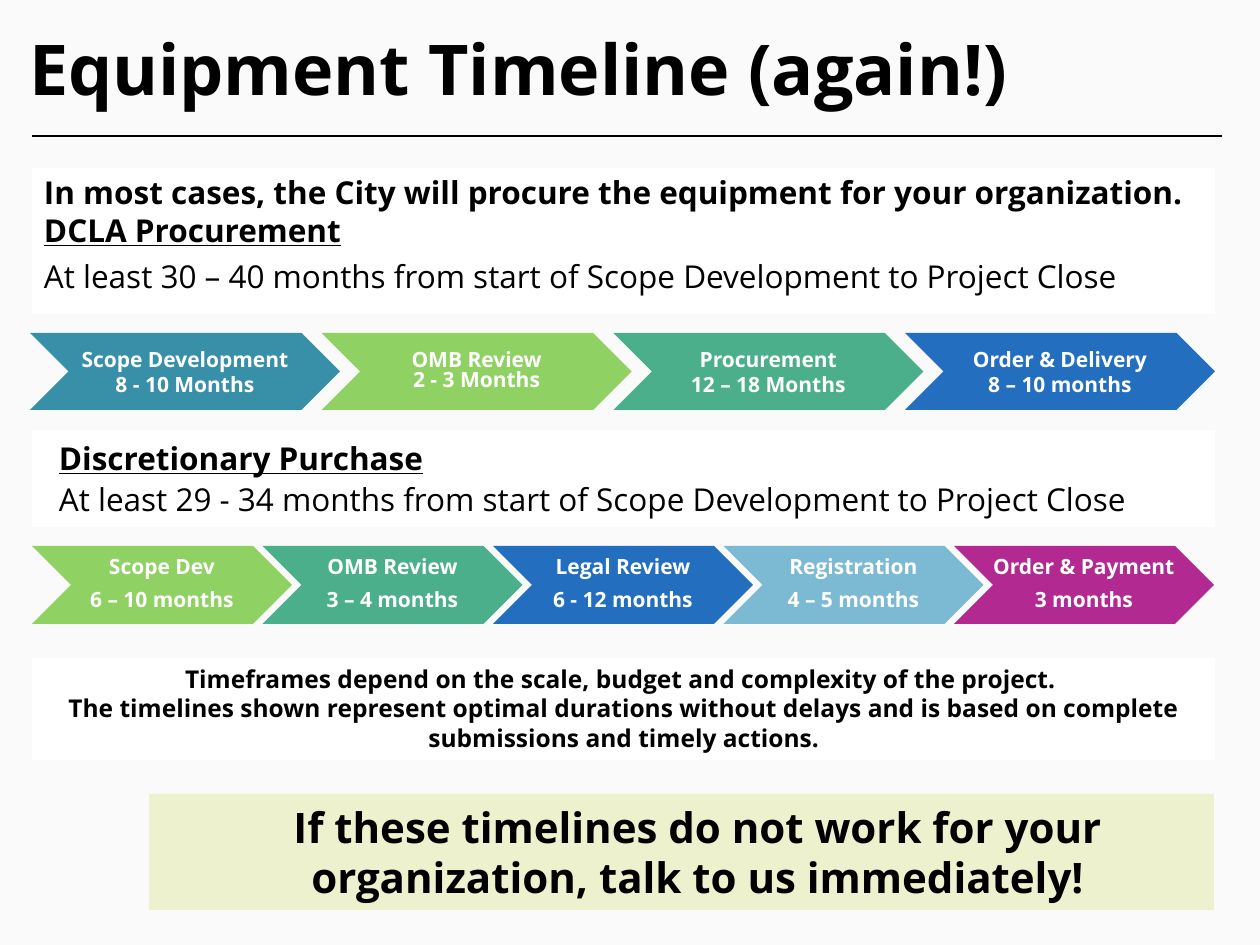
"""Build the equipment timeline slide."""
from dataclasses import dataclass

from lxml.etree import SubElement
from pptx import Presentation
from pptx.dml.color import RGBColor
from pptx.enum.shapes import MSO_CONNECTOR, MSO_SHAPE
from pptx.enum.text import MSO_ANCHOR as Anchor, PP_ALIGN as Align
from pptx.oxml.ns import qn
from pptx.util import Pt

EMU_PER_PX = 914400 / 126


@dataclass(frozen=True)
class Theme:
    font: str = "Open Sans"
    paper: str = "FAFAFA"
    panel: str = "FFFFFF"
    ink: str = "000000"
    light: str = "FFFFFF"
    callout: str = "EAEEBA"
    teal: str = "3890A8"
    lime: str = "90D164"
    green: str = "4AAF8A"
    blue: str = "236EBE"
    sky: str = "7CBAD3"
    magenta: str = "B22A91"
    title_size: int = 40
    callout_size: int = 24
    panel_size: int = 18
    note_size: int = 14
    step_size: int = 12


THEME = Theme()
TITLE = "Equipment Timeline\u00a0(again!)".replace("\u00a0", " ")

PANELS = [
    dict(box=(32, 168, 1183, 146), size=THEME.panel_size, insets=(0, 5), indent=12, after=4.5,
         paragraphs=[
             [("In most cases, the City will procure the equipment for your organization. ", "b"),
              ("DCLA Procurement", "bu")],
             [("At least 30 – 40 months from start of Scope Development to Project Close", "")]]),
    dict(box=(32, 430, 1183, 97), size=THEME.panel_size, insets=(9, 5), indent=18, spacing=1.1,
         paragraphs=[
             [("Discretionary Purchase", "bu")],
             [("At least 29 - 34 months from start of Scope Development to Project Close", "")]]),
    dict(box=(32, 658, 1183, 102), size=THEME.note_size, indent=1, align=Align.CENTER,
         paragraphs=[
             [("Timeframes depend on the scale, budget and complexity of the project. ", "b")],
             [("The timelines shown represent optimal durations without delays and is based "
               "on complete submissions and timely actions.", "b")]]),
    dict(box=(149, 794, 1065, 116), size=THEME.callout_size, indent=32, align=Align.CENTER,
         fill=THEME.callout, opacity=70, anchor=Anchor.MIDDLE,
         paragraphs=[
             [("If these timelines do not work for your organization, "
               "talk to us immediately!", "b")]]),
]

TIMELINES = [
    dict(first=30, last=905, top=333, width=310, height=77, before=0, steps=[
        ("Scope Development", "8 - 10 Months", THEME.teal, 1.0),
        ("OMB Review", "2 - 3 Months", THEME.lime, 0.8),
        ("Procurement", "12 – 18 Months", THEME.green, 1.0),
        ("Order & Delivery", "8 – 10 months", THEME.blue, 1.0)]),
    dict(first=32, last=954, top=546, width=260, height=78, before=6.8, steps=[
        ("Scope Dev", "6 – 10 months", THEME.lime, 0.8),
        ("OMB Review", "3 – 4 months", THEME.green, 0.8),
        ("Legal Review", "6 - 12 months", THEME.blue, 0.8),
        ("Registration", "4 – 5 months", THEME.sky, 0.8),
        ("Order & Payment", "3 months", THEME.magenta, 0.8)]),
]


def px(length):
    return round(length * EMU_PER_PX)


def style(run, size, color, flags="b"):
    run.font.name = THEME.font
    run.font.size = Pt(size)
    run.font.bold = "b" in flags
    run.font.underline = "u" in flags
    run.font.color.rgb = RGBColor.from_string(color)


def set_frame(frame, insets, anchor, wrap=True):
    frame.margin_left = frame.margin_right = px(insets[0])
    frame.margin_top = frame.margin_bottom = px(insets[1])
    frame.vertical_anchor = anchor
    frame.word_wrap = wrap


def indent_paragraph(paragraph, indent):
    properties = paragraph._p.get_or_add_pPr()
    properties.set("marL", str(px(indent)))
    properties.set("indent", "0")


def add_block(slide, preset, box, color, opacity=100):
    block = slide.shapes.add_shape(preset, *map(px, box))
    block.shadow.inherit = False
    block.line.fill.background()
    block.fill.solid()
    block.fill.fore_color.rgb = RGBColor.from_string(color)
    if opacity < 100:
        tint = block._element.spPr.find(qn("a:solidFill"))[0]
        SubElement(tint, qn("a:alpha"), val=str(opacity * 1000))
    return block


def add_heading(slide):
    heading = slide.shapes.title
    heading.left, heading.top, heading.width, heading.height = map(px, (0, 0, 1260, 135))
    heading.text_frame.text = TITLE
    set_frame(heading.text_frame, (13, 6), Anchor.MIDDLE)
    line = heading.text_frame.paragraphs[0]
    line.alignment = Align.LEFT
    indent_paragraph(line, 16)
    style(line.runs[0], THEME.title_size, THEME.ink)
    rule = slide.shapes.add_connector(MSO_CONNECTOR.STRAIGHT, *map(px, (32, 136, 1222, 136)))
    rule.line.width = Pt(0.75)
    rule.line.color.rgb = RGBColor.from_string(THEME.ink)
    SubElement(rule._element.spPr, qn("a:effectLst"))


def add_panel(slide, box, size, paragraphs, insets=(13, 6), indent=0, after=0, spacing=1.0,
              align=Align.LEFT, fill=THEME.panel, opacity=100, anchor=Anchor.TOP):
    frame = add_block(slide, MSO_SHAPE.RECTANGLE, box, fill, opacity).text_frame
    set_frame(frame, insets, anchor)
    for index, pieces in enumerate(paragraphs):
        paragraph = frame.add_paragraph() if index else frame.paragraphs[0]
        paragraph.alignment = align
        paragraph.line_spacing = spacing
        paragraph.space_after = Pt(after)
        indent_paragraph(paragraph, indent)
        for words, flags in pieces:
            run = paragraph.add_run()
            run.text = words
            style(run, size, THEME.ink, flags)


def add_timeline(slide, first, last, top, width, height, before, steps):
    pitch = (last - first) / (len(steps) - 1)
    for index, (stage, duration, color, spacing) in enumerate(steps):
        box = (first + index * pitch, top, width, height)
        frame = add_block(slide, MSO_SHAPE.CHEVRON, box, color).text_frame
        frame.text = f"{stage}\n{duration}"
        set_frame(frame, (9, 5), Anchor.MIDDLE, wrap=False)
        for paragraph in frame.paragraphs:
            paragraph.alignment = Align.CENTER
            paragraph.line_spacing = spacing
            style(paragraph.runs[0], THEME.step_size, THEME.light)
        frame.paragraphs[1].space_before = Pt(before)


def main():
    deck = Presentation()
    deck.slide_width, deck.slide_height = px(1260), px(945)
    slide = deck.slides.add_slide(deck.slide_layouts[5])
    slide.background.fill.solid()
    slide.background.fill.fore_color.rgb = RGBColor.from_string(THEME.paper)
    add_heading(slide)
    for panel in PANELS:
        add_panel(slide, **panel)
    for timeline in TIMELINES:
        add_timeline(slide, **timeline)
    deck.save("out.pptx")


if __name__ == "__main__":
    main()
